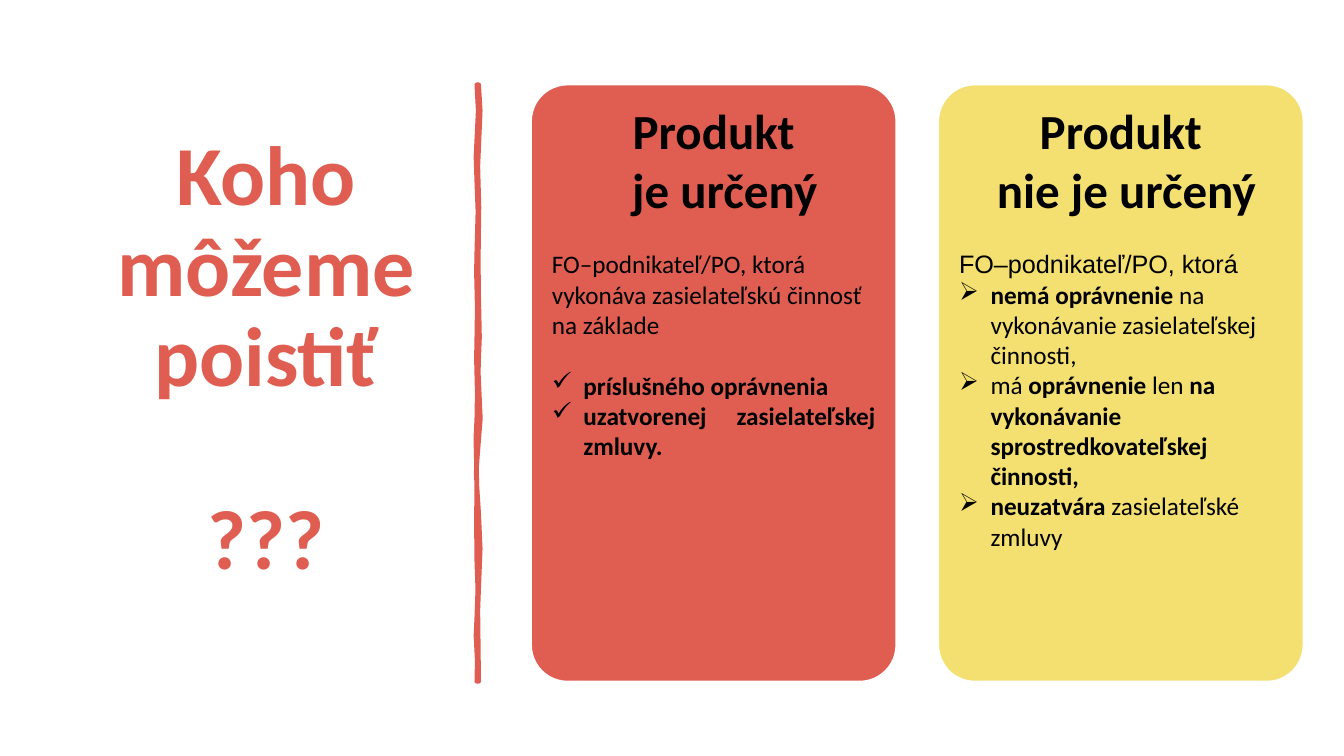
from lxml import etree
from pptx import Presentation
from pptx.dml.color import RGBColor
from pptx.enum.shapes import MSO_SHAPE
from pptx.enum.text import MSO_ANCHOR, PP_ALIGN
from pptx.oxml.ns import qn
from pptx.util import Pt

CENTER, LEFT, JUSTIFY = PP_ALIGN.CENTER, PP_ALIGN.LEFT, PP_ALIGN.JUSTIFY
TOP, MIDDLE = MSO_ANCHOR.TOP, MSO_ANCHOR.MIDDLE
ROUNDED = MSO_SHAPE.ROUNDED_RECTANGLE

RED = RGBColor(0xDF, 0x5E, 0x51)
YELLOW = RGBColor(0xF4, 0xE0, 0x71)
BLACK = RGBColor(0, 0, 0)
WHITE = RGBColor(0xFF, 0xFF, 0xFF)

CARD_LEFT, CARD_TOP, CARD_PITCH = 379.44, 60.48, 290.88
CARD_WIDTH, CARD_HEIGHT = 260.64, 426.24
BODY_LINE = 22
BULLET_INDENT = 22.5

# Hand-drawn stroke: (x offset from STROKE_X, y) down the right edge, up the left.
STROKE_X = 342
STROKE = [
    (0, 60.5), (1.1, 79), (0, 105), (-0.6, 119), (0.2, 148), (0, 163),
    (-0.3, 187), (0, 212), (0.6, 241), (0, 256), (-0.3, 266), (1.2, 299),
    (0, 314), (-1.9, 338), (0, 367), (1.1, 392), (0, 420), (-0.6, 436),
    (0, 486.7), (-1.4, 486.7), (-1.1, 472), (-2, 454), (-1.4, 441),
    (-0.7, 421), (-1.4, 401), (-1.7, 374), (-1.4, 343), (-2.1, 313),
    (-1.4, 299), (-1.1, 281), (-1.7, 256), (-1.4, 241), (-1.1, 220),
    (-1.7, 194), (-1.4, 180), (-0.6, 151), (-1.4, 130), (-2, 112),
    (-0.4, 79), (-1.4, 60.5),
]


class SlideBuilder:
    def __init__(self, slide, font="Calibri"):
        self.slide = slide
        self.font = font

    def paragraph(self, frame, runs, size, color=BLACK, bold=None, align=LEFT,
                  font=None, before=0, indent=0, bullet=None):
        """Add a paragraph; runs is a string or a list of (text, bold)."""
        first = frame.paragraphs[0]
        para = frame.add_paragraph() if first.runs else first
        para.alignment = align
        para.space_before = Pt(before)
        para.font.name = font or self.font
        para.font.size = Pt(size)
        para.font.color.rgb = color
        para.font.bold = bold
        if isinstance(runs, str):
            runs = [(runs, None)]
        for text, run_bold in runs:
            run = para.add_run()
            run.text = text
            if run_bold is not None:
                run.font.bold = run_bold
        props = para._p.get_or_add_pPr()
        props.set("marL", str(Pt(indent)))
        if bullet:
            props.set("indent", str(-Pt(indent)))
            mark = etree.Element(qn("a:buChar"), char=bullet)
            props.find(qn("a:defRPr")).addprevious(mark)
        return para

    def title(self, left, top, width, height, lines):
        frame = self.slide.shapes.add_textbox(
            Pt(left), Pt(top), Pt(width), Pt(height)).text_frame
        frame.word_wrap = True
        frame.vertical_anchor = MIDDLE
        for text, before in lines:
            para = self.paragraph(frame, text, 60, RED, True, CENTER, before=before)
            para.line_spacing = 0.9

    def stroke(self, x, outline, color):
        points = [(Pt(x + dx), Pt(y)) for dx, y in outline]
        builder = self.slide.shapes.build_freeform(*points[0])
        builder.add_line_segments(points[1:], close=True)
        divider = builder.convert_to_shape()
        divider.shadow.inherit = False
        divider.fill.solid()
        divider.fill.fore_color.rgb = color
        divider.line.color.rgb = color
        divider.line.width = Pt(3.25)
        etree.SubElement(divider.line._get_or_add_ln(), qn("a:round"))

    def card(self, column, fill, heading, heading_shift):
        """Draw a card with its two-line heading and return its text frame."""
        card = self.slide.shapes.add_shape(
            ROUNDED, Pt(CARD_LEFT + column * CARD_PITCH), Pt(CARD_TOP),
            Pt(CARD_WIDTH), Pt(CARD_HEIGHT))
        card.adjustments[0] = 0.1
        card.shadow.inherit = False
        card.fill.solid()
        card.fill.fore_color.rgb = fill
        card.line.color.rgb = WHITE
        card.line.width = Pt(1)
        frame = card.text_frame
        frame.word_wrap = True
        frame.vertical_anchor = TOP
        for text, shift in zip(heading, (0, heading_shift)):
            self.paragraph(frame, text, 35, bold=True, align=CENTER, indent=shift)
        return frame

    def bullets(self, frame, mark, items, align=LEFT, before=0):
        for number, runs in enumerate(items):
            self.paragraph(frame, runs, 18, align=align, indent=BULLET_INDENT,
                           bullet=mark, before=0 if number else before)


def main():
    deck = Presentation()
    deck.slide_width, deck.slide_height = Pt(960), Pt(540)
    page = SlideBuilder(deck.slides.add_slide(deck.slide_layouts[6]))

    page.title(55.44, 82.08, 269.28, 350.64,
               [("Koho môžeme poistiť", 0), ("???", 66)])
    page.stroke(STROKE_X, STROKE, RED)

    excluded = page.card(1, YELLOW, ("Produkt", "nie je určený"), 8)
    page.paragraph(excluded, "FO–podnikateľ/PO, ktorá", 18, font="Arial",
                   before=BODY_LINE)
    page.bullets(excluded, "➢", [
        [("nemá oprávnenie ", True),
         ("na vykonávanie zasielateľskej činnosti,", False)],
        [("má ", False), ("oprávnenie", True), (" len ", False),
         ("na vykonávanie sprostredkovateľskej činnosti,", True)],
        [("neuzatvára", True), (" zasielateľské zmluvy", False)],
    ])

    eligible = page.card(0, RED, ("Produkt", "je určený"), 16)
    page.paragraph(
        eligible,
        "FO–podnikateľ/PO, ktorá vykonáva zasielateľskú činnosť na základe",
        18, before=BODY_LINE)
    page.bullets(eligible, "✓", [
        [("príslušného oprávnenia", True)],
        [("uzatvorenej zasielateľskej zmluvy.", True)],
    ], JUSTIFY, BODY_LINE)

    deck.save("out.pptx")


if __name__ == "__main__":
    main()
